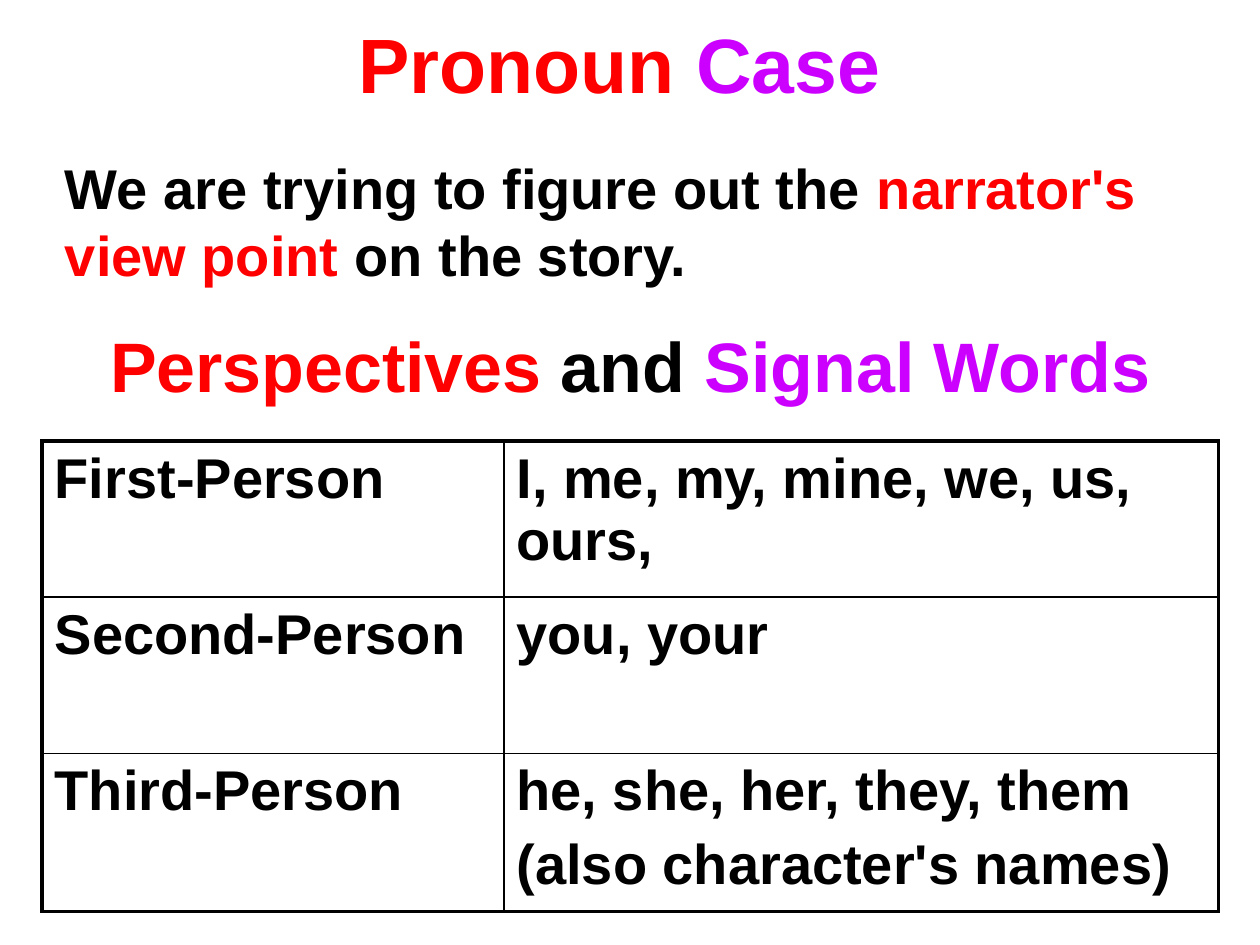
from dataclasses import dataclass

from lxml.etree import SubElement
from pptx import Presentation
from pptx.dml.color import RGBColor
from pptx.enum.text import MSO_ANCHOR, PP_ALIGN
from pptx.oxml.ns import qn
from pptx.util import Cm, Pt


@dataclass(frozen=True)
class Theme:
    font: str = "Arial"
    black: str = "000000"
    red: str = "FF0000"
    purple: str = "CC00FF"
    title: int = 44
    heading: int = 40
    body: int = 32
    outer_line: float = 2.25
    inner_line: float = 1


THEME = Theme()
PERSPECTIVES = [
    ("First-Person", ["I, me, my, mine, we, us, ours,"]),
    ("Second-Person", ["you, your"]),
    ("Third-Person", ["he, she, her, they, them", "(also character's names)"]),
]


def write_paragraph(paragraph, pieces, size, align=PP_ALIGN.LEFT, space_before=0):
    """Fill a paragraph from (wording, colour) pieces."""
    paragraph.alignment = align
    paragraph.space_before = Pt(space_before)
    for wording, colour in pieces:
        run = paragraph.add_run()
        run.text = wording
        run.font.name = THEME.font
        run.font.size = Pt(size)
        run.font.bold = True
        run.font.color.rgb = RGBColor.from_string(colour)


def add_text_frame(slide, left, top, width, height, anchor=MSO_ANCHOR.TOP):
    frame = slide.shapes.add_textbox(Cm(left), Cm(top), Cm(width), Cm(height)).text_frame
    frame.word_wrap = True
    frame.vertical_anchor = anchor
    return frame


def add_title(slide):
    frame = add_text_frame(slide, 0.84, 0, 23.29, 2.54, MSO_ANCHOR.MIDDLE)
    pieces = [("Pronoun ", THEME.red), ("Case", THEME.purple)]
    write_paragraph(frame.paragraphs[0], pieces, THEME.title, PP_ALIGN.CENTER)


def add_introduction(slide):
    frame = add_text_frame(slide, 1.06, 2.97, 23.29, 5.5)
    goal = [
        ("We are trying to figure out the ", THEME.black),
        ("narrator's view point", THEME.red),
        (" on the story.", THEME.black),
    ]
    heading = [
        ("Perspectives", THEME.red),
        (" and ", THEME.black),
        ("Signal Words", THEME.purple),
    ]
    write_paragraph(frame.paragraphs[0], goal, THEME.body, space_before=THEME.body * 0.5)
    write_paragraph(frame.add_paragraph(), heading, THEME.heading,
                    PP_ALIGN.CENTER, THEME.heading * 0.5)


def set_borders(cell, outer_sides):
    """Draw all four borders, heavier on the sides at the table's edge."""
    properties = cell._tc.get_or_add_tcPr()
    for position, side in enumerate("LRTB"):
        weight = THEME.outer_line if side in outer_sides else THEME.inner_line
        border = SubElement(properties, qn(f"a:ln{side}"), w=str(Pt(weight)))
        fill = SubElement(border, qn("a:solidFill"))
        SubElement(fill, qn("a:srgbClr"), val=THEME.black)
        properties.insert(position, border)


def add_perspective_table(slide):
    row_count = len(PERSPECTIVES)
    table = slide.shapes.add_table(
        row_count, 2, Cm(0.85), Cm(8.89), Cm(23.71), Cm(9.45)).table
    table.first_row = table.horz_banding = False
    for column, width in zip(table.columns, (9.31, 14.4)):
        column.width = Cm(width)
    for row_index, (perspective, signal_words) in enumerate(PERSPECTIVES):
        row_edge = {0: "T", row_count - 1: "B"}.get(row_index, "")
        for column_index, lines in enumerate(([perspective], signal_words)):
            cell = table.cell(row_index, column_index)
            cell.fill.background()
            set_borders(cell, row_edge + "LR"[column_index])
            frame = cell.text_frame
            for line_index, line in enumerate(lines):
                paragraph = frame.add_paragraph() if line_index else frame.paragraphs[0]
                write_paragraph(paragraph, [(line, THEME.black)], THEME.body,
                                space_before=THEME.body * 0.2)


def main():
    presentation = Presentation()
    presentation.slide_width, presentation.slide_height = Cm(25.4), Cm(19.05)
    slide = presentation.slides.add_slide(presentation.slide_layouts[6])
    add_title(slide)
    add_perspective_table(slide)
    add_introduction(slide)
    presentation.save("out.pptx")


if __name__ == "__main__":
    main()
